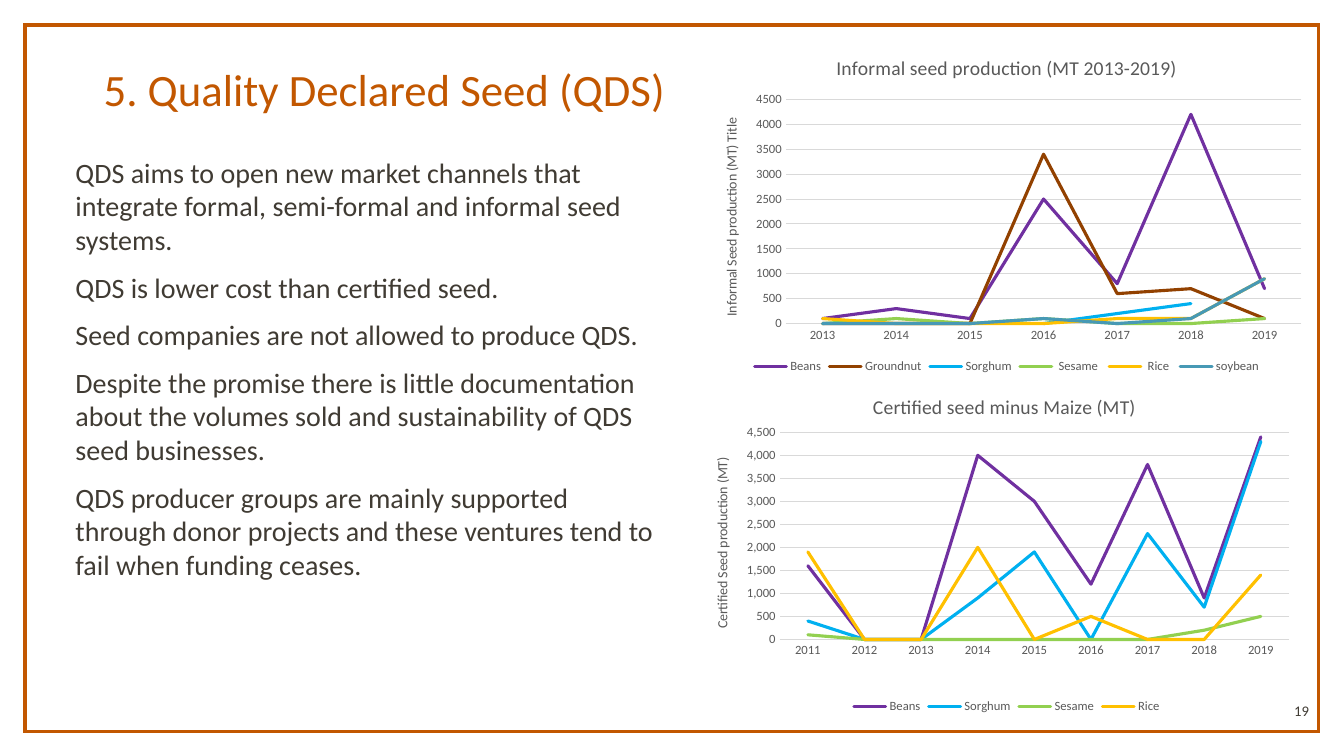
from lxml import etree
from pptx import Presentation
from pptx.chart.data import CategoryChartData
from pptx.dml.color import RGBColor
from pptx.enum.chart import XL_CHART_TYPE, XL_LEGEND_POSITION, XL_TICK_MARK
from pptx.enum.shapes import MSO_SHAPE
from pptx.enum.text import MSO_ANCHOR, PP_ALIGN
from pptx.oxml.ns import qn
from pptx.util import Inches, Pt

LINE_CHART = XL_CHART_TYPE.LINE
LEGEND_BOTTOM = XL_LEGEND_POSITION.BOTTOM
NO_TICK = XL_TICK_MARK.NONE

FONT = "Calibri"
ORANGE, DARK, GREY, GRID = "C25700", "403B33", "595959", "D9D9D9"
CROP_COLORS = {
    "Beans": "7030A0", "Groundnut": "924100", "Sorghum": "00B0F0",
    "Sesame": "92D050", "Rice": "FFC000", "soybean": "4799B5",
}

TITLE = "5. Quality Declared Seed (QDS)"
BODY = [
    "QDS aims to open new market channels that integrate formal, semi-formal and informal seed systems.",
    "QDS is lower cost than certified seed.",
    "Seed companies are not allowed to produce QDS.",
    "Despite the promise there is little documentation about the volumes sold and sustainability of QDS seed businesses.",
    "QDS producer groups are mainly supported through donor projects and these ventures tend to fail when funding ceases.",
]
PAGE_NUMBER = "19"

# plot: left, top, width and height as fractions of the chart
CHARTS = [
    {
        "title": "Certified seed minus Maize (MT) ",
        "axis_title": "Certified Seed production (MT) ",
        "top": 3.75, "first_year": 2011, "format": "#,##0",
        "plot": (0.13, 0.16, 0.83, 0.61),
        "crops": {
            "Beans": (1600, 0, 0, 4000, 3000, 1200, 3800, 900, 4400),
            "Sorghum": (400, 0, 0, 900, 1900, 0, 2300, 700, 4300),
            "Sesame": (100, 0, 0, 0, 0, 0, 0, 200, 500),
            "Rice": (1900, 0, 0, 2000, 0, 500, 0, 0, 1400),
        },
    },
    {
        "title": "Informal seed production (MT 2013-2019)",
        "axis_title": "Informal Seed production (MT) Title",
        "top": 0.38, "first_year": 2013, "format": "0",
        "plot": (0.14, 0.18, 0.84, 0.66),
        "crops": {
            "Beans": (100, 300, 100, 2500, 800, 4200, 700),
            "Groundnut": (0, 0, 0, 3400, 600, 700, 100),
            "Sorghum": (100, None, None, 0, 200, 400, None),
            " Sesame ": (0, 100, 0, 100, 0, 0, 100),
            " Rice ": (100, 0, 0, 0, 100, 100, 900),
            "soybean": (0, 0, 0, 100, 0, 100, 900),
        },
    },
]
CHART_LEFT, CHART_WIDTH, CHART_HEIGHT = 6.94, 6.09, 3.37
LAST_YEAR = 2019


def rgb(color):
    return RGBColor.from_string(color)


def style_font(font, size, color):
    font.name, font.size, font.bold = FONT, Pt(size), False
    font.color.rgb = rgb(color)


def style_line(line, color, width):
    line.color.rgb = rgb(color)
    line.width = Pt(width)


def add_text(slide, box, lines, size, color, anchor=MSO_ANCHOR.TOP,
             align=PP_ALIGN.LEFT, inset=0.1, space_before=0, line_spacing=1.0):
    frame = slide.shapes.add_textbox(*map(Inches, box)).text_frame
    frame.word_wrap = True
    frame.vertical_anchor = anchor
    frame.margin_left = frame.margin_right = Inches(0.1)
    frame.margin_top = frame.margin_bottom = Inches(inset)
    for index, line in enumerate(lines):
        paragraph = frame.add_paragraph() if index else frame.paragraphs[0]
        paragraph.text = line
        paragraph.alignment = align
        paragraph.space_before = Pt(space_before)
        paragraph.line_spacing = line_spacing
        style_font(paragraph.font, size, color)


def set_title(title, text, size):
    """Fill the title of a chart or an axis."""
    title.text_frame.text = text
    style_font(title.text_frame.paragraphs[0].font, size, GREY)


def place_plot(chart, fractions):
    """Fix the inner plot area, which python-pptx leaves automatic."""
    plot_area = chart._chartSpace.chart.plotArea
    for old_layout in plot_area.findall(qn("c:layout")):
        plot_area.remove(old_layout)
    layout = etree.Element(qn("c:layout"))
    plot_area.insert(0, layout)
    manual = etree.SubElement(layout, qn("c:manualLayout"))
    settings = [("layoutTarget", "inner"), ("xMode", "edge"), ("yMode", "edge")]
    settings += zip("xywh", fractions)
    for tag, value in settings:
        etree.SubElement(manual, qn("c:" + tag)).set("val", str(value))


def add_seed_chart(slide, content):
    data = CategoryChartData(number_format=content["format"])
    data.categories = [str(year) for year in range(content["first_year"], LAST_YEAR + 1)]
    for crop, values in content["crops"].items():
        data.add_series(crop, values)
    box = (CHART_LEFT, content["top"], CHART_WIDTH, CHART_HEIGHT)
    chart = slide.shapes.add_chart(LINE_CHART, *map(Inches, box), data).chart
    style_font(chart.font, 10, "000000")
    set_title(chart.chart_title, content["title"], 14)
    chart.chart_title.include_in_layout = False

    chart.has_legend = True
    chart.legend.position = LEGEND_BOTTOM
    chart.legend.include_in_layout = False
    style_font(chart.legend.font, 9, GREY)

    years, tonnes = chart.category_axis, chart.value_axis
    for axis in (years, tonnes):
        axis.major_tick_mark = axis.minor_tick_mark = NO_TICK
        style_font(axis.tick_labels.font, 9, GREY)
    style_line(years.format.line, GRID, 0.75)
    tonnes.format.line.fill.background()
    tonnes.minimum_scale, tonnes.maximum_scale, tonnes.major_unit = 0, 4500, 500
    tonnes.tick_labels.number_format = content["format"]
    tonnes.tick_labels.number_format_is_linked = False
    style_line(tonnes.major_gridlines.format.line, GRID, 0.75)
    set_title(tonnes.axis_title, content["axis_title"], 10)

    chart.plots[0].vary_by_categories = False
    for series in chart.plots[0].series:
        series.smooth = False
        line = series.format.line
        style_line(line, CROP_COLORS[series.name.strip()], 2.25)
        line._get_or_add_ln().set("cap", "rnd")
    place_plot(chart, content["plot"])


def main():
    presentation = Presentation()
    presentation.slide_width, presentation.slide_height = Inches(13.33), Inches(7.5)
    slide = presentation.slides.add_slide(presentation.slide_layouts[6])

    border = slide.shapes.add_shape(MSO_SHAPE.RECTANGLE, *map(Inches, (0.25, 0.25, 12.83, 7.01)))
    border.shadow.inherit = False
    border.fill.background()
    style_line(border.line, ORANGE, 2.5)
    etree.SubElement(border.line._get_or_add_ln(), qn("a:miter")).set("lim", "800000")

    add_text(slide, (0.93, 0.18, 11.33, 1.07), [TITLE], 32, ORANGE,
             anchor=MSO_ANCHOR.BOTTOM, line_spacing=0.9)
    add_text(slide, (0.65, 1.44, 6.02, 5.09), BODY, 20, DARK, space_before=10)
    add_text(slide, (12.49, 6.99, 0.59, 0.13), [PAGE_NUMBER], 10.5, DARK,
             anchor=MSO_ANCHOR.MIDDLE, align=PP_ALIGN.RIGHT, inset=0.05)
    for content in CHARTS:
        add_seed_chart(slide, content)
    presentation.save("out.pptx")


if __name__ == "__main__":
    main()
